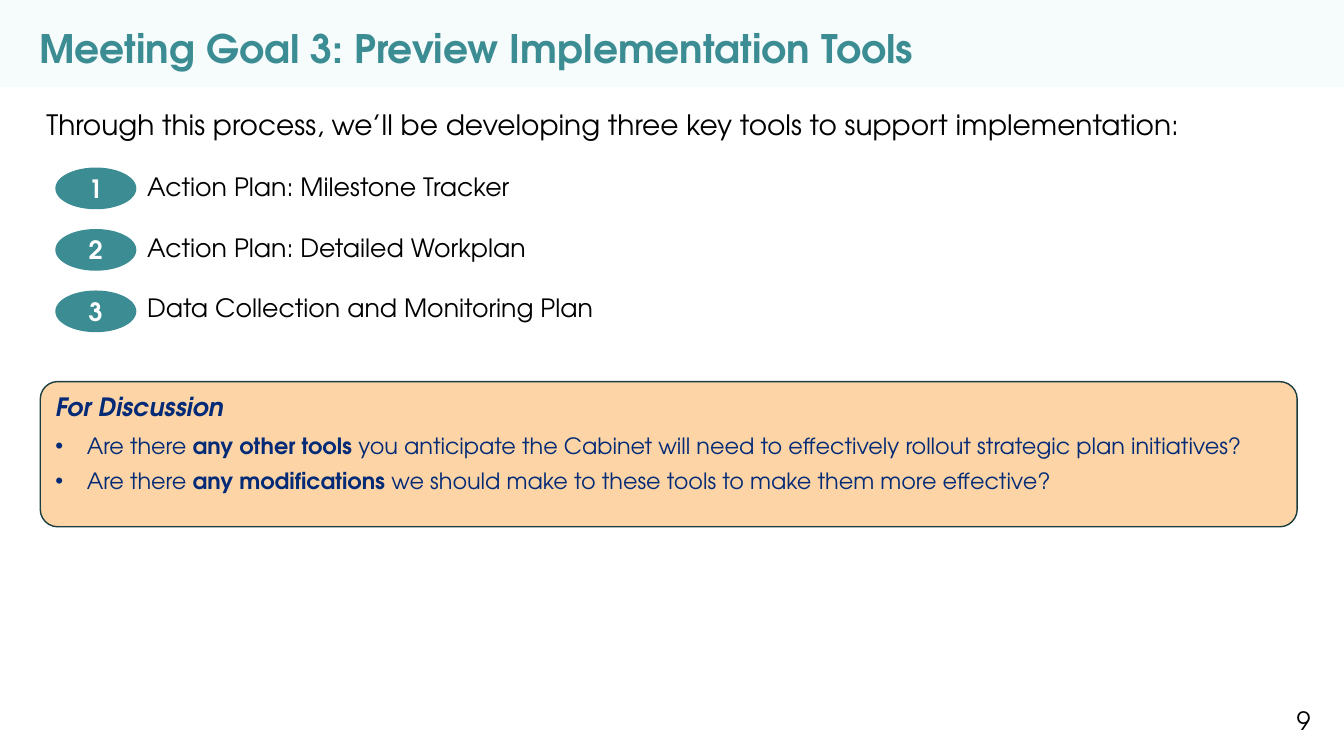
"""Build the slide that previews the implementation tools."""
from lxml.etree import SubElement
from pptx import Presentation
from pptx.dml.color import RGBColor
from pptx.enum.shapes import MSO_SHAPE as Shape
from pptx.enum.text import MSO_ANCHOR as Anchor, MSO_AUTO_SIZE as AutoSize, PP_ALIGN as Align
from pptx.oxml.ns import qn
from pptx.util import Pt

TITLE = "Meeting Goal 3: Preview Implementation Tools"
INTRO = "Through this process, we’ll be developing three key tools to support implementation:"
TOOLS = [
    "Action Plan: Milestone Tracker",
    "Action Plan: Detailed Workplan",
    "Data Collection and Monitoring Plan",
]
DISCUSSION_HEADING = "For Discussion"
QUESTIONS = [
    ("Are there ", "any other tools ",
     "you anticipate the Cabinet will need to effectively rollout strategic plan initiatives?"),
    ("Are there ", "any modifications ",
     "we should make to these tools to make them more effective?"),
]
PAGE_NUMBER = "9"

FONT = "TeX Gyre Adventor"
COLORS = {
    "teal": "3C8C93", "band": "A9D8DC", "peach": "FCD4A5", "outline": "1A3D40",
    "navy": "032A77", "black": "000000", "white": "FFFFFF",
}
BADGE_LEFT, BADGE_TOP, BADGE_PITCH = 40, 120.2, 43.9
BADGE_WIDTH, BADGE_HEIGHT = 56.9, 28.8
TOOL_INDENT, TOOL_GAP = 72, 21.6
BULLET_INDENT = 22.5


def color(name):
    return RGBColor.from_string(COLORS[name])


def style(paragraph, size, color_name, bold=False, italic=False):
    for run in paragraph.runs:
        font = run.font
        font.name, font.size = FONT, Pt(size)
        font.bold, font.italic = bold, italic
        font.color.rgb = color(color_name)


def set_indent(paragraph, left, first=0, bullet=None):
    properties = paragraph._p.get_or_add_pPr()
    properties.set("marL", str(Pt(left)))
    properties.set("indent", str(Pt(first)))
    if bullet:
        SubElement(properties, qn("a:buFont"), typeface="Arial")
        SubElement(properties, qn("a:buChar"), char=bullet)
    else:
        SubElement(properties, qn("a:buNone"))


def place(shape, left, top, width, height):
    shape.left, shape.top, shape.width, shape.height = map(Pt, (left, top, width, height))


def prepare_frame(shape, anchor=Anchor.TOP):
    frame = shape.text_frame
    frame.word_wrap = True
    frame.auto_size = AutoSize.NONE
    frame.vertical_anchor = anchor
    return frame


def add_shape(slide, kind, box, fill, line=None):
    shape = slide.shapes.add_shape(kind, *map(Pt, box))
    shape.shadow.inherit = False
    shape.fill.solid()
    shape.fill.fore_color.rgb = color(fill)
    if line:
        shape.line.color.rgb = color(line)
        shape.line.width = Pt(1)
    else:
        shape.line.fill.background()
    return shape


def add_band(slide):
    band = add_shape(slide, Shape.RECTANGLE, (0, 0, 960, 62), "band")
    fill_color = band._element.spPr.find(qn("a:solidFill"))[0]
    SubElement(fill_color, qn("a:alpha"), val="10000")
    slide.shapes._spTree.insert(2, band._element)


def fill_title(slide):
    title = slide.shapes.title
    place(title, 21, 17.3, 899.3, 45.4)
    frame = prepare_frame(title)
    frame.text = TITLE
    paragraph = frame.paragraphs[0]
    paragraph.alignment = Align.LEFT
    paragraph.line_spacing = 0.9
    style(paragraph, 28, "teal", bold=True)


def fill_tools(slide):
    body = slide.placeholders[1]
    place(body, 25.9, 73.4, 915.8, 162.7)
    frame = prepare_frame(body)
    frame.text = "\n".join([INTRO, *TOOLS])
    for index, paragraph in enumerate(frame.paragraphs):
        paragraph.space_before = Pt(TOOL_GAP if index else 0)
        set_indent(paragraph, TOOL_INDENT if index else 0)
        style(paragraph, 18 if index else 20, "black")
    for index in range(len(TOOLS)):
        top = BADGE_TOP + index * BADGE_PITCH
        badge = add_shape(slide, Shape.OVAL, (BADGE_LEFT, top, BADGE_WIDTH, BADGE_HEIGHT),
                          "teal", "teal")
        frame = prepare_frame(badge, Anchor.MIDDLE)
        frame.text = str(index + 1)
        frame.paragraphs[0].alignment = Align.CENTER
        style(frame.paragraphs[0], 18, "white", bold=True)


def add_discussion(slide):
    panel = add_shape(slide, Shape.ROUNDED_RECTANGLE, (28.8, 272.6, 897.8, 103.7),
                      "peach", "outline")
    panel.adjustments[0] = 0.12
    frame = prepare_frame(panel)
    frame.text = DISCUSSION_HEADING
    heading = frame.paragraphs[0]
    heading.alignment = Align.LEFT
    heading.space_after = Pt(7.2)
    style(heading, 18, "navy", bold=True, italic=True)
    for question in QUESTIONS:
        paragraph = frame.add_paragraph()
        paragraph.alignment = Align.LEFT
        paragraph.space_after = Pt(6)
        set_indent(paragraph, BULLET_INDENT, -BULLET_INDENT, "•")
        for text in question:
            paragraph.add_run().text = text
        style(paragraph, 16, "navy")
        paragraph.runs[1].font.bold = True


def add_page_number(slide):
    box = slide.shapes.add_textbox(*map(Pt, (837.4, 500.4, 105.8, 28.8)))
    frame = prepare_frame(box)
    frame.text = PAGE_NUMBER
    frame.paragraphs[0].alignment = Align.RIGHT
    style(frame.paragraphs[0], 18, "black")


def main():
    presentation = Presentation()
    presentation.slide_width, presentation.slide_height = Pt(960), Pt(540)
    slide = presentation.slides.add_slide(presentation.slide_layouts[1])
    add_band(slide)
    fill_title(slide)
    fill_tools(slide)
    add_discussion(slide)
    add_page_number(slide)
    presentation.save("out.pptx")


if __name__ == "__main__":
    main()
